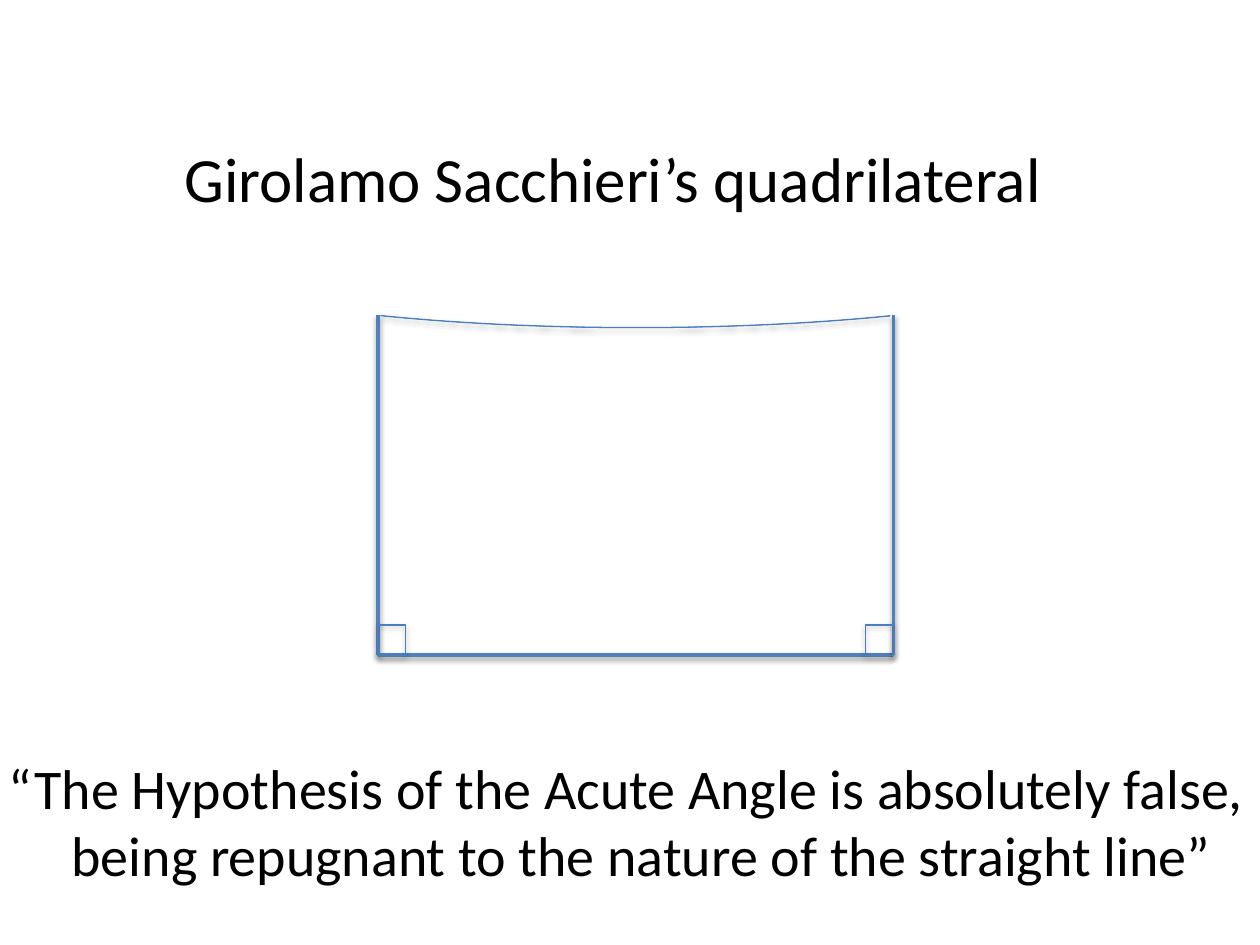
from dataclasses import dataclass

from lxml import etree
from pptx import Presentation
from pptx import util as u
from pptx.dml.color import RGBColor
from pptx.enum import shapes, text
from pptx.oxml.ns import qn

WIDTH, HEIGHT = 10, 7.5
COLOURS = {"text": "000000", "side": "4F81BD", "outline": "4B7EBC",
           "deep": "3F80CE", "pale": "A4C4FF", "shadow": "000000"}
FONT = "Calibri"
LEFT, RIGHT, TOP, BASE = 3, 7.09, 2.5, 5.2
MARK_WIDTH, MARK_HEIGHT = 0.22, 0.24


@dataclass
class Side:
    start: tuple[float, float]
    end: tuple[float, float]


@dataclass
class Outline:
    kind: shapes.MSO_SHAPE
    area: tuple[float, float, float, float]
    adjustments: tuple[float, ...]
    rotation: float = 0


@dataclass
class Caption:
    area: tuple[float, float, float, float]
    lines: list[tuple[str, float]]  # wording and left indent in inches
    size: float
    align: text.PP_ALIGN
    anchor: text.MSO_ANCHOR


CORNERS = [(LEFT, TOP), (LEFT, BASE), (RIGHT, BASE), (RIGHT, TOP)]
SIDES = [Side(start, end) for start, end in zip(CORNERS, CORNERS[1:])]
OUTLINES = [
    Outline(shapes.MSO_SHAPE.FRAME,
            (x, BASE - MARK_HEIGHT, MARK_WIDTH, MARK_HEIGHT), (0,))
    for x in (LEFT, RIGHT - MARK_WIDTH)
] + [Outline(shapes.MSO_SHAPE.BLOCK_ARC, (1.06, 1.23, 7.98, 1.37),
             (117.83, 206.26, 0), 180)]
CAPTIONS = [
    Caption((0.8, 0.68, 8.13, 1.45), [("Girolamo Sacchieri’s quadrilateral", 0)],
            36, text.PP_ALIGN.CENTER, text.MSO_ANCHOR.MIDDLE),
    Caption((-0.03, 5.93, 10.04, 1.18),
            [("“The Hypothesis of the Acute Angle is absolutely false,", 0),
             ("being repugnant to the nature of the straight line”", 0.5)],
            32, text.PP_ALIGN.LEFT, text.MSO_ANCHOR.TOP),
]


def colour(name: str) -> RGBColor:
    return RGBColor.from_string(COLOURS[name])


def inches(values: tuple[float, ...]) -> list[int]:
    return [u.Inches(value) for value in values]


def add_shadow(shape, distance: float, opacity: int) -> None:
    """Cast a soft shadow straight down; distance in points, opacity in percent."""
    effects = etree.SubElement(shape._element.spPr, qn("a:effectLst"))
    shadow = etree.SubElement(
        effects, qn("a:outerShdw"), blurRad=str(u.Pt(3.1)),
        dist=str(u.Pt(distance)), dir=str(90 * 60000), rotWithShape="0")
    tint = etree.SubElement(shadow, qn("a:srgbClr"), val=COLOURS["shadow"])
    etree.SubElement(tint, qn("a:alpha"), val=str(opacity * 1000))


def add_side(page, side: Side) -> None:
    line = page.shapes.add_connector(
        shapes.MSO_CONNECTOR.STRAIGHT, *inches(side.start + side.end))
    line.line.color.rgb = colour("side")
    line.line.width = u.Pt(2)
    add_shadow(line, 1.6, 38)


def add_outline(page, outline: Outline) -> None:
    shape = page.shapes.add_shape(outline.kind, *inches(outline.area))
    shape.rotation = outline.rotation
    for index, value in enumerate(outline.adjustments):
        shape.adjustments[index] = value
    shape.fill.gradient()
    shape.fill.gradient_angle = 90
    for stop, name in zip(shape.fill.gradient_stops, ("deep", "pale")):
        stop.color.rgb = colour(name)
    shape.line.color.rgb = colour("outline")
    shape.line.width = u.Pt(0.75)
    add_shadow(shape, 1.8, 35)


def add_caption(page, caption: Caption) -> None:
    frame = page.shapes.add_textbox(*inches(caption.area)).text_frame
    frame.word_wrap = True
    frame.vertical_anchor = caption.anchor
    for index, (wording, indent) in enumerate(caption.lines):
        para = frame.add_paragraph() if index else frame.paragraphs[0]
        para.alignment = caption.align
        if indent:
            para._p.get_or_add_pPr().set("marL", str(u.Inches(indent)))
        span = para.add_run()
        span.text = wording
        for key, value in {"name": FONT, "size": u.Pt(caption.size)}.items():
            setattr(span.font, key, value)
        span.font.color.rgb = colour("text")


def main() -> None:
    deck = Presentation()
    deck.slide_width, deck.slide_height = inches((WIDTH, HEIGHT))
    page = deck.slides.add_slide(deck.slide_layouts[6])
    for draw, items in ((add_side, SIDES), (add_outline, OUTLINES),
                        (add_caption, CAPTIONS)):
        for item in items:
            draw(page, item)
    deck.save("out.pptx")


if __name__ == "__main__":
    main()
